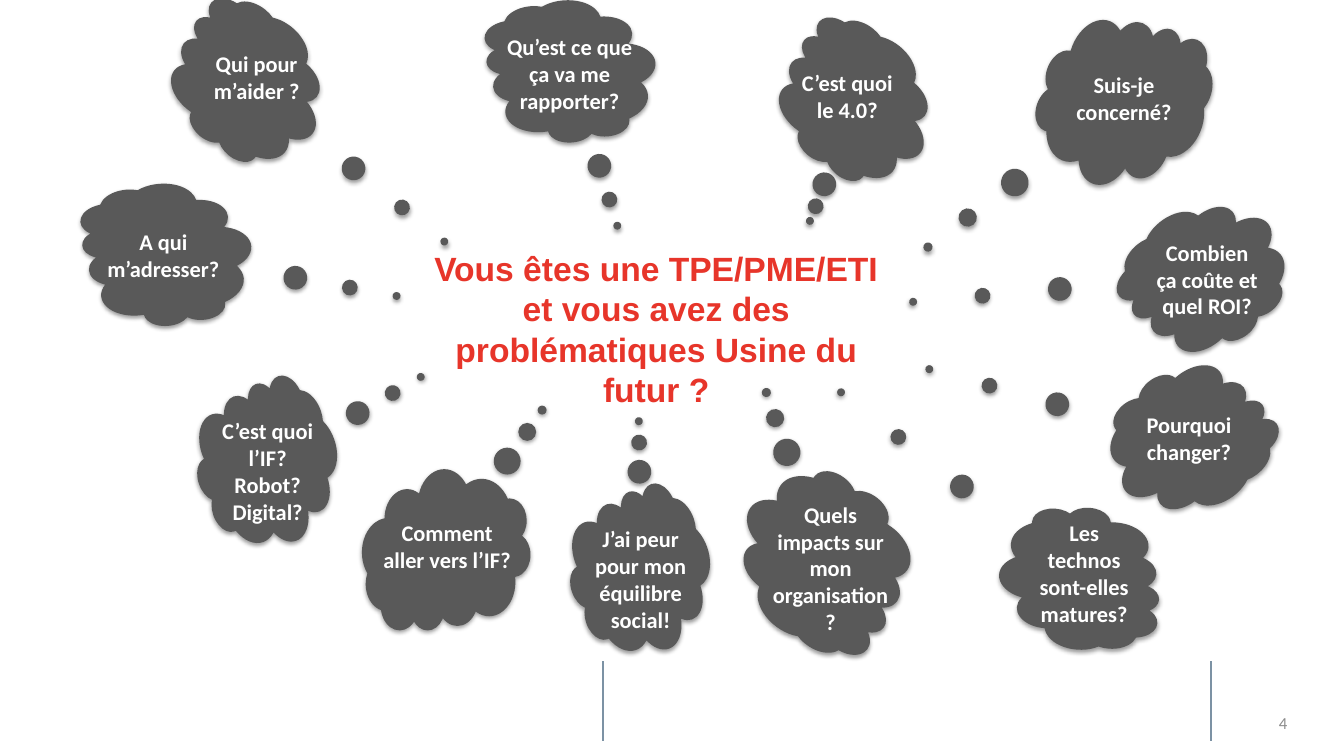
import collections
import lxml.etree
import pptx
import pptx.dml.color
import pptx.enum.shapes
import pptx.enum.text
import pptx.oxml
import pptx.oxml.ns
import pptx.util

HEADLINE = "Vous êtes une TPE/PME/ETI et vous avez des problématiques Usine du futur ?"
HEADLINE_AREA = (30.15, 32.13, 37.35, 22.93)
PAGE_NUMBER = "4"
PAGE_NUMBER_AREA = (92.48, 92.67, 4.05, 5.87)
DIVIDER_COLUMNS = (44.85, 90.08)
DIVIDER_ROWS = (87.47, 98)

STANDARD = (10.58, 21.33)
TALL = (10.58, 22.27)
NARROW, MEDIUM, BROAD = 9.23, 10.8, 11.48
TEXT_PADDING, TEXT_LINE = 1.33, 3.6

Question = collections.namedtuple(
    "Question", "wording cloud_at cloud_size turn tail wording_at wording_width lines")
QUESTIONS = [
    Question("Comment aller vers l’IF?", (26.93, 62.13), (12.53, 21.33), 180,
             (-0.57, 0.87), (27.53, 68), BROAD, 2),
    Question("C’est quoi l’IF?\nRobot?\nDigital?", (14.63, 50.8), STANDARD, 340.7,
             (1.22, -0.2), (15.3, 54.53), NARROW, 4),
    Question("Suis-je concerné?", (77.4, 2.13), (12.3, 22.8), 21.8,
             (-0.77, 1.2), (77.48, 8.8), 12.3, 2),
    Question("Pourquoi changer?", (83.18, 47.6), STANDARD, 53,
             (-1.5, 1.02), (83.85, 53.73), NARROW, 2),
    Question("Les technos sont-elles matures?", (75.08, 65.87), STANDARD, 94,
             (-1.19, 1.56), (76.05, 68), NARROW, 4),
    Question("A qui m’adresser?", (7.13, 22.53), TALL, 265.4,
             (-0.42, 1.34), (6.75, 29.47), MEDIUM, 2),
    Question("Quels impacts sur mon organisation?", (55.2, 62.27), (12.15, 23.6), 126.9,
             (-0.61, 0.82), (56.4, 65.6), MEDIUM, 5),
    Question("C’est quoi le 4.0?", (58.43, 2.93), STANDARD, 309.2,
             (-0.85, 0.24), (58.43, 8.53), NARROW, 2),
    Question("J’ai peur pour mon équilibre social!", (42.38, 65.07), STANDARD, 340.7,
             (0.34, -0.89), (43.05, 68.8), NARROW, 4),
    Question("Qui pour m’aider ?", (13.2, 0.4), STANDARD, 309.2,
             (0.01, 1.56), (14.48, 6), NARROW, 2),
    Question("Combien ça coûte et quel ROI?", (84.45, 25.87), STANDARD, 230.9,
             (1.16, -1.51), (85.2, 30.93), NARROW, 3),
    Question("Qu’est ce que ça va me rapporter?", (37.2, -1.73), TALL, 265.4,
             (-1.11, 0.2), (36.98, 3.73), MEDIUM, 3),
]


class Theme:
    cloud = pptx.dml.color.RGBColor.from_string("595959")
    question = pptx.dml.color.RGBColor.from_string("FFFFFF")
    headline = pptx.dml.color.RGBColor.from_string("E7352A")
    divider = pptx.dml.color.RGBColor.from_string("7C92A4")
    page_number = pptx.dml.color.RGBColor.from_string("8C8C8C")
    headline_font, body_font = "Arial", "Calibri"
    headline_size = pptx.util.Pt(24)
    question_size = pptx.util.Pt(16)
    page_number_size = pptx.util.Pt(12)
    divider_width = pptx.util.Pt(1.5)
    shadow_blur = pptx.util.Pt(3.1)
    shadow_distance = pptx.util.Pt(1.6)


ANCHOR = pptx.enum.text.MSO_ANCHOR
ALIGN = pptx.enum.text.PP_ALIGN
AUTO_SIZE = pptx.enum.text.MSO_AUTO_SIZE

deck = pptx.Presentation()
deck.slide_width = pptx.util.Inches(13.33)
deck.slide_height = pptx.util.Inches(7.5)
slide = deck.slides.add_slide(deck.slide_layouts[5])


def across(share):
    return round(deck.slide_width * share / 100)


def down(share):
    return round(deck.slide_height * share / 100)


def area(left, top, width, height):
    return across(left), down(top), across(width), down(height)


def write(holder, wording, font, size, color, bold, align, anchor, auto_size):
    frame = holder.text_frame
    frame.text = wording
    frame.word_wrap = True
    frame.auto_size = auto_size
    frame.vertical_anchor = anchor
    for paragraph in frame.paragraphs:
        paragraph.alignment = align
        paragraph.font.name = font
        paragraph.font.size = size
        paragraph.font.bold = bold
        paragraph.font.color.rgb = color


def add_soft_shadow(cloud):
    cloud.shadow.inherit = False
    effects = cloud._element.spPr.find(pptx.oxml.ns.qn("a:effectLst"))
    effects.append(pptx.oxml.parse_xml(
        f'<a:outerShdw {pptx.oxml.ns.nsdecls("a")} blurRad="{Theme.shadow_blur}" '
        f'dist="{Theme.shadow_distance}" dir="5400000" rotWithShape="0">'
        '<a:srgbClr val="000000"><a:alpha val="38000"/></a:srgbClr></a:outerShdw>'))


def add_divider(column):
    top, bottom = DIVIDER_ROWS
    divider = slide.shapes.add_connector(
        pptx.enum.shapes.MSO_CONNECTOR.STRAIGHT,
        across(column), down(top), across(column), down(bottom))
    divider.line.color.rgb = Theme.divider
    divider.line.width = Theme.divider_width
    lxml.etree.SubElement(divider._element.spPr, pptx.oxml.ns.qn("a:effectLst"))


def add_question(question):
    cloud = slide.shapes.add_shape(
        pptx.enum.shapes.MSO_SHAPE.CLOUD_CALLOUT,
        *area(*question.cloud_at, *question.cloud_size))
    cloud.rotation = question.turn
    cloud.adjustments[0], cloud.adjustments[1] = question.tail
    cloud.fill.solid()
    cloud.fill.fore_color.rgb = Theme.cloud
    cloud.line.fill.background()
    add_soft_shadow(cloud)
    height = TEXT_PADDING + TEXT_LINE * question.lines
    wording = slide.shapes.add_textbox(
        *area(*question.wording_at, question.wording_width, height))
    write(wording, question.wording, Theme.body_font, Theme.question_size, Theme.question,
          True, ALIGN.CENTER, ANCHOR.TOP, AUTO_SIZE.SHAPE_TO_FIT_TEXT)


for column in DIVIDER_COLUMNS:
    add_divider(column)

page_number = slide.shapes.add_textbox(*area(*PAGE_NUMBER_AREA))
write(page_number, PAGE_NUMBER, Theme.body_font, Theme.page_number_size, Theme.page_number,
      False, ALIGN.RIGHT, ANCHOR.MIDDLE, AUTO_SIZE.NONE)

for question in QUESTIONS:
    add_question(question)

headline = slide.shapes.title
headline.left, headline.top, headline.width, headline.height = area(*HEADLINE_AREA)
write(headline, HEADLINE, Theme.headline_font, Theme.headline_size, Theme.headline,
      True, ALIGN.CENTER, ANCHOR.TOP, AUTO_SIZE.NONE)

deck.save("out.pptx")
